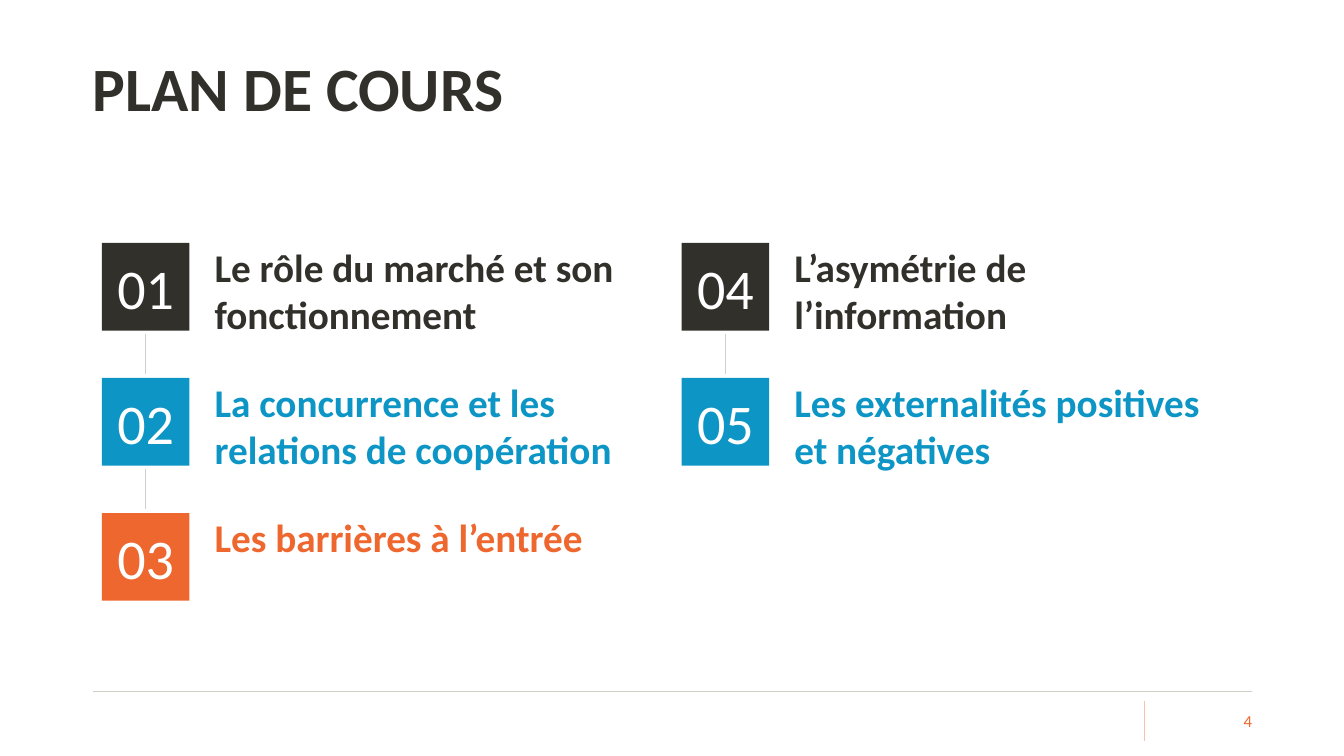
import pptx
import pptx.util
import pptx.dml.color
import pptx.enum.shapes
import pptx.enum.text
import pptx.oxml.ns
import lxml.etree

Inches = pptx.util.Inches
ANCHOR = pptx.enum.text.MSO_ANCHOR
ALIGN = pptx.enum.text.PP_ALIGN
COLORS = {
    "dark": "31302B",
    "blue": "0D96C5",
    "orange": "EE672F",
    "white": "FFFFFF",
    "footer": "CECDC7",
    "divider": "F8C2AC",
    "link": "D0CECE",
}


def write(box, text, size, color, bold=False, align=ALIGN.LEFT,
          anchor=ANCHOR.TOP, margins=(0.1, 0.05, 0.1, 0.05)):
    frame = box.text_frame
    frame.text = text
    frame.word_wrap = True
    frame.auto_size = pptx.enum.text.MSO_AUTO_SIZE.NONE
    frame.vertical_anchor = anchor
    (frame.margin_left, frame.margin_top,
     frame.margin_right, frame.margin_bottom) = map(Inches, margins)
    para = frame.paragraphs[0]
    para.alignment = align
    span = para.runs[0]
    span.font.name = "Calibri"
    span.font.size = pptx.util.Pt(size)
    span.font.bold = bold
    span.font.color.rgb = pptx.dml.color.RGBColor.from_string(COLORS[color])


def draw_line(x1, y1, x2, y2, color):
    line = page.shapes.add_connector(
        pptx.enum.shapes.MSO_CONNECTOR.STRAIGHT,
        Inches(x1), Inches(y1), Inches(x2), Inches(y2))
    line.line.color.rgb = pptx.dml.color.RGBColor.from_string(COLORS[color])
    line.line.width = pptx.util.Pt(0.5)
    lxml.etree.SubElement(line._element.spPr, pptx.oxml.ns.qn("a:effectLst"))


deck = pptx.Presentation()
deck.slide_width, deck.slide_height = Inches(13.33), Inches(7.5)
page = deck.slides.add_slide(deck.slide_layouts[5])

# Title
title = page.shapes.title
title.left, title.top = Inches(0.92), Inches(0.18)
title.width, title.height = Inches(10.47), Inches(1.45)
write(title, "PLAN DE COURS", 44, "dark", bold=True,
      anchor=ANCHOR.MIDDLE, margins=(0, 0.05, 0.1, 0.05))
title.text_frame.paragraphs[0].line_spacing = 0.9

# Numbered chapters, in two columns
columns = [
    ["Le rôle du marché et son fonctionnement",
     "La concurrence et les relations de coopération",
     "Les barrières à l’entrée"],
    ["L’asymétrie de l’information",
     "Les externalités positives et négatives"],
]
row_colors = ["dark", "blue", "orange"]
side, row_step, column_step = 0.87, 1.34, 5.75
number = 0
for column, chapters in enumerate(columns):
    left = 1.01 + column * column_step
    for row, chapter in enumerate(chapters):
        number += 1
        top = 2.41 + row * row_step
        color = row_colors[row]

        label = page.shapes.add_textbox(
            Inches(left + 1.02), Inches(top), Inches(4.61), Inches(0.94))
        write(label, chapter, 28, color, bold=True, margins=(0.1, 0, 0.1, 0))

        square = page.shapes.add_shape(
            pptx.enum.shapes.MSO_SHAPE.RECTANGLE,
            Inches(left), Inches(top), Inches(side), Inches(side))
        square.shadow.inherit = False
        square.fill.solid()
        square.fill.fore_color.rgb = pptx.dml.color.RGBColor.from_string(COLORS[color])
        square.line.fill.background()
        write(square, f"{number:02d}", 40, "white",
              align=ALIGN.CENTER, anchor=ANCHOR.MIDDLE)

        # Short link down from the previous square
        if row > 0:
            middle = left + side / 2
            draw_line(middle, top - 0.44, middle, top - 0.04, "link")

# Footer with page number
draw_line(0.92, 6.86, 12.42, 6.86, "footer")
draw_line(11.35, 6.95, 11.35, 7.35, "divider")
page_number = page.shapes.add_textbox(
    Inches(11.47), Inches(6.95), Inches(0.95), Inches(0.4))
write(page_number, "4", 12, "orange", align=ALIGN.RIGHT,
      anchor=ANCHOR.MIDDLE, margins=(0, 0.05, 0, 0.05))

deck.save("out.pptx")
